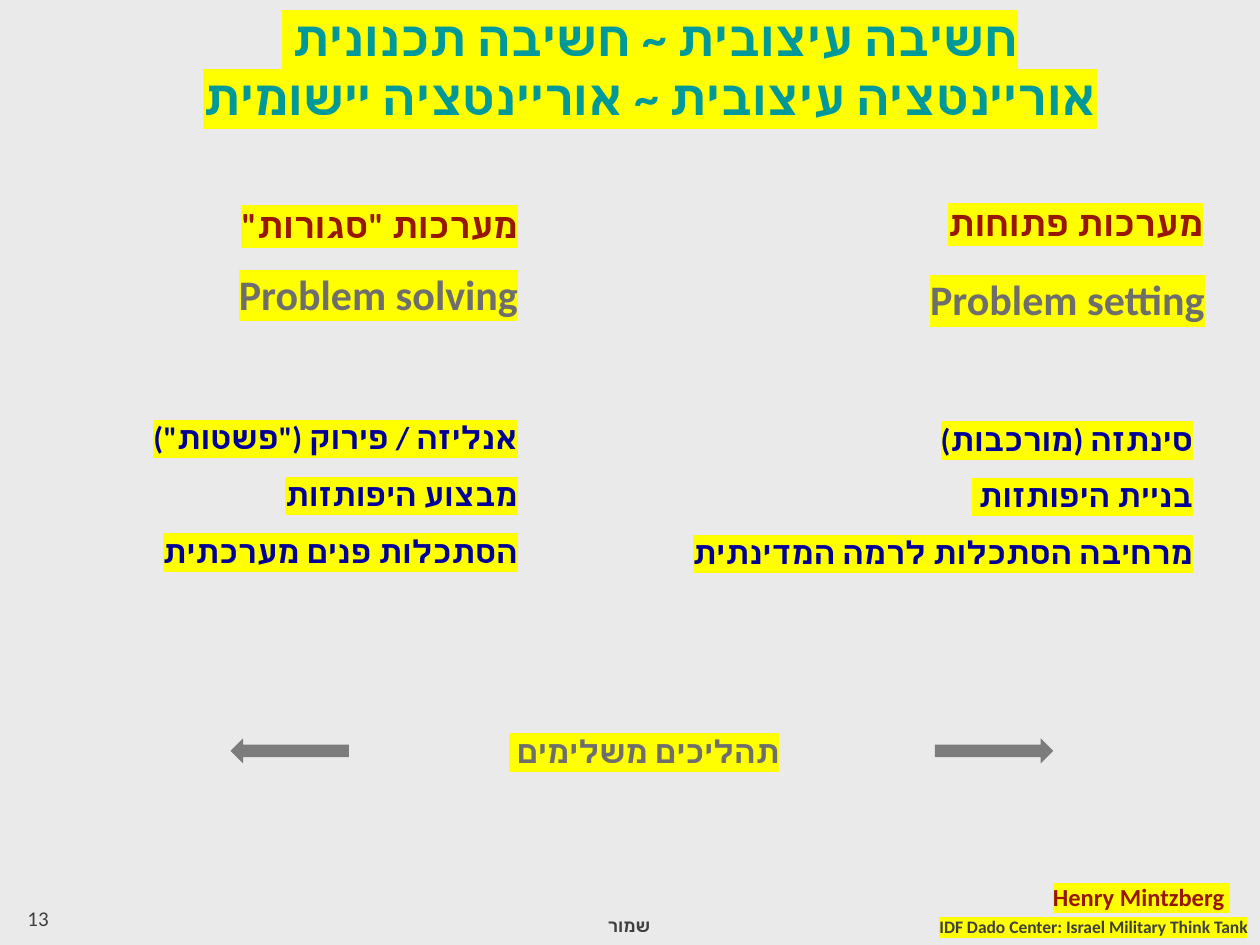
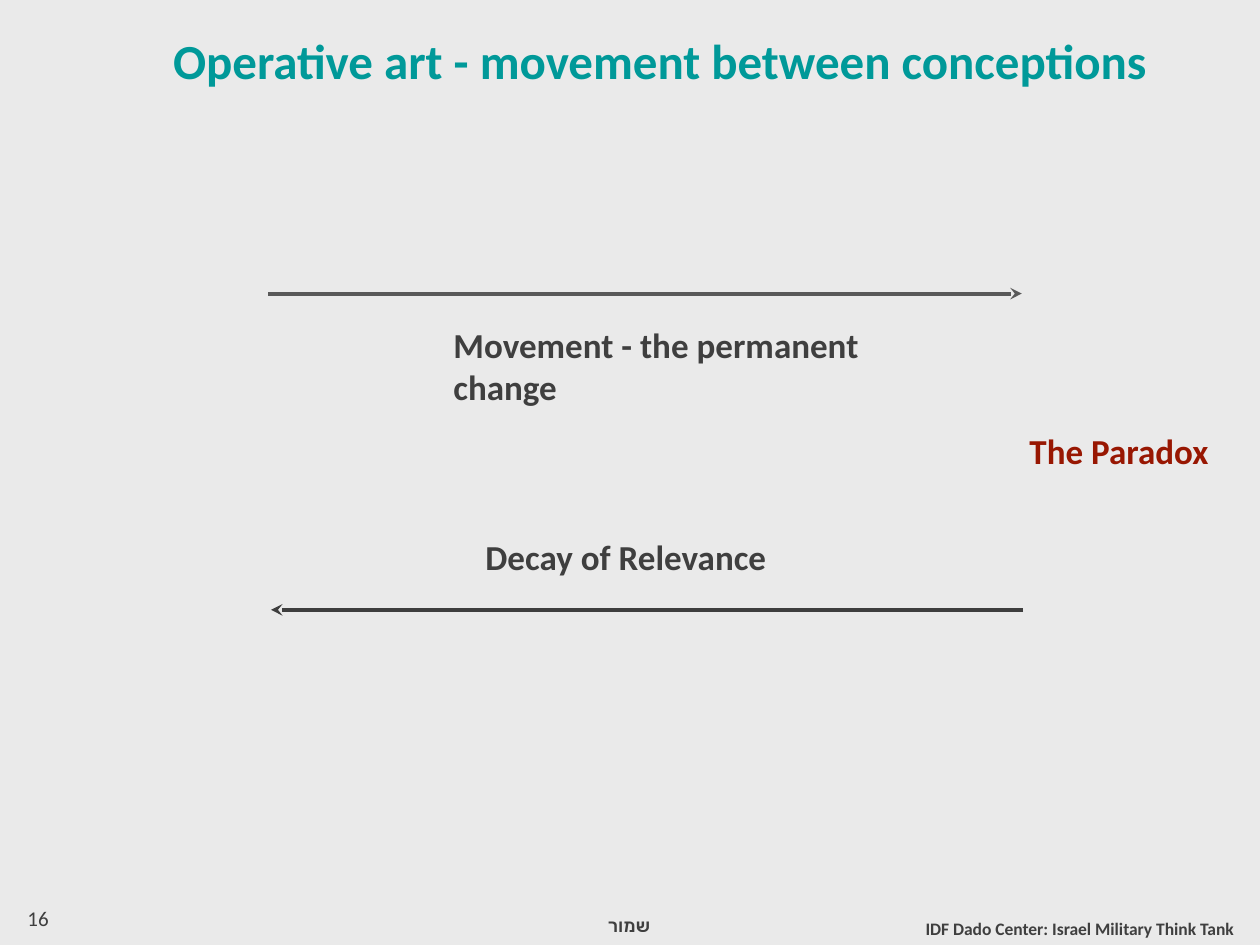
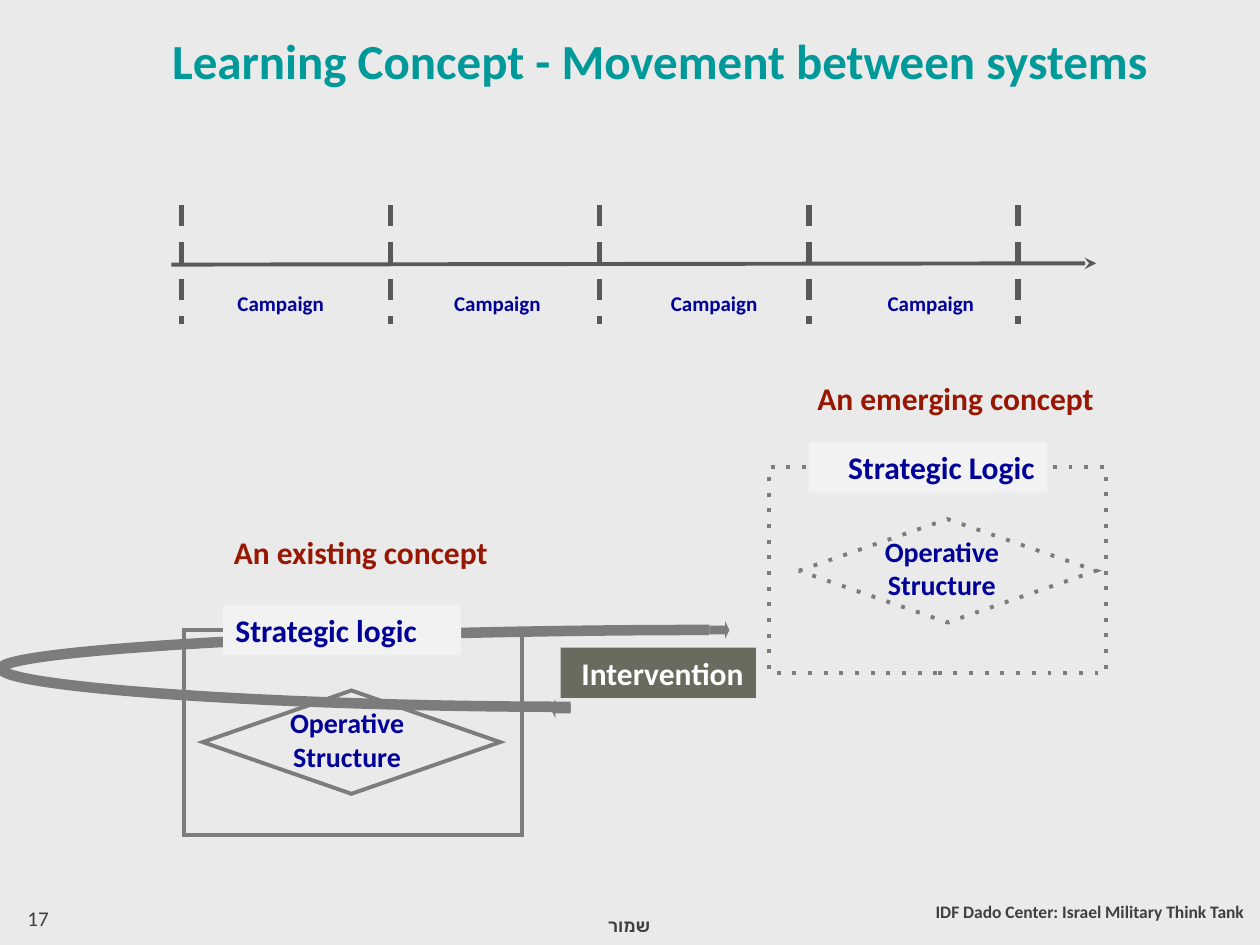
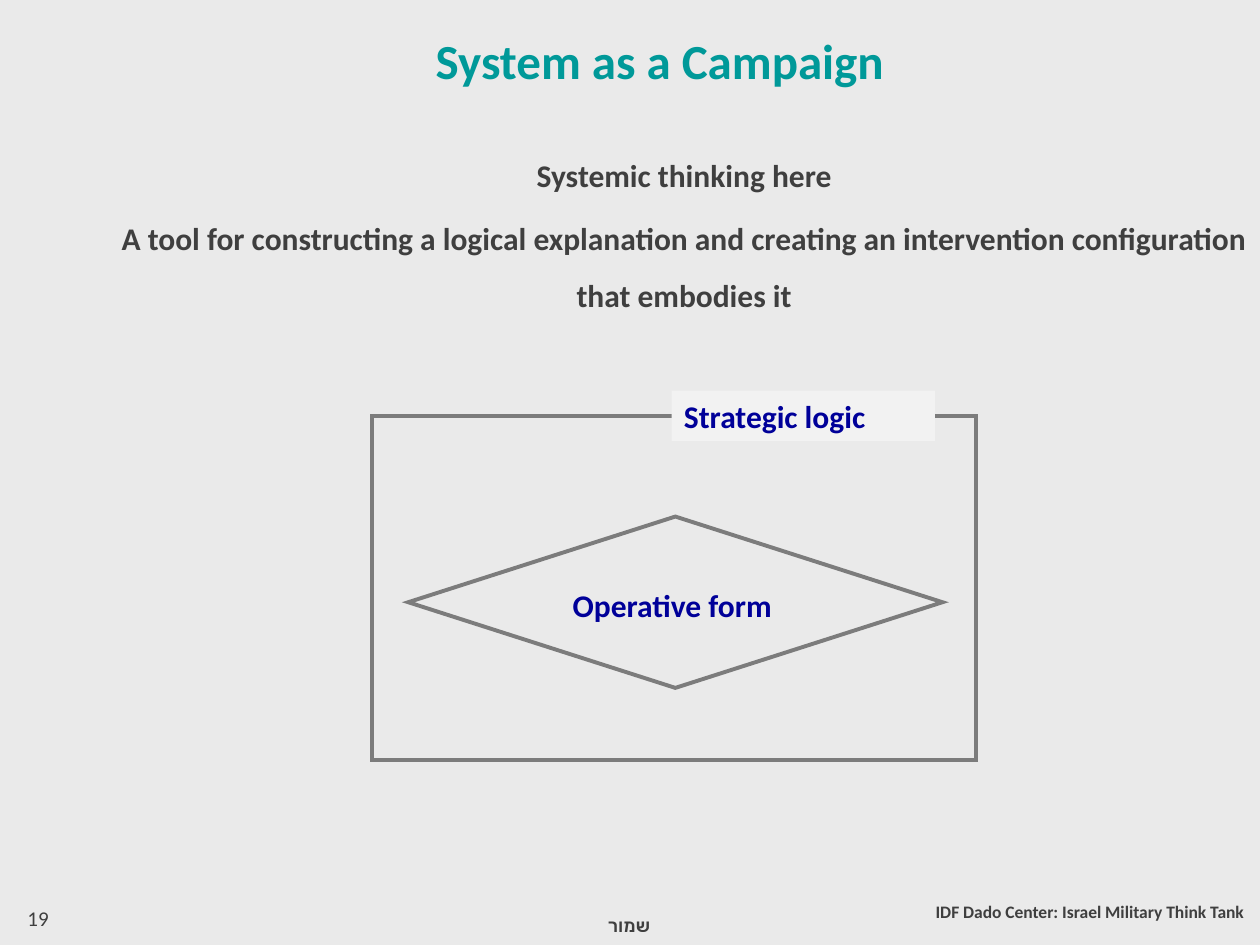
from dataclasses import dataclass

from lxml.etree import SubElement
from pptx import Presentation
from pptx.dml.color import RGBColor
from pptx.enum.shapes import MSO_CONNECTOR as Connector, MSO_SHAPE as Preset
from pptx.enum.text import MSO_ANCHOR as Anchor, MSO_AUTO_SIZE as AutoSize, PP_ALIGN as Align
from pptx.oxml.ns import qn
from pptx.util import Inches, Pt


@dataclass(frozen=True)
class Theme:
    font: str = "Calibri"
    background: str = "EAEAEA"
    title: str = "009999"
    body: str = "3F3F3F"
    accent: str = "981702"
    navy: str = "000099"
    muted: str = "6E6E6E"
    outline: str = "7C7C7C"
    axis: str = "595959"
    dark_axis: str = "3E3E3E"
    label: str = "F2F2F2"
    olive: str = "686B5D"
    white: str = "FFFFFF"
    highlight: str = "FFFF00"
    title_size: int = 28
    large_size: int = 24
    heading_size: int = 20
    text_size: int = 18
    inner_size: int = 16
    name_size: int = 14
    small_size: int = 12
    footer_size: int = 10


THEME = Theme()
TITLE_ONLY, ONE_LIST, TWO_LISTS = 5, 1, 3


def write_text(shape, text, size=THEME.text_size, color=THEME.body, bold=True, align=Align.RIGHT,
               rtl=True, highlight=False, spacing=None, gap=0):
    """Fill a shape with one paragraph per item of text, or a single one for a string."""
    frame = shape.text_frame
    frame.word_wrap = True
    frame.auto_size = AutoSize.NONE
    frame.vertical_anchor = Anchor.TOP
    for index, line in enumerate([text] if isinstance(text, str) else text):
        paragraph = frame.add_paragraph() if index else frame.paragraphs[0]
        paragraph.text = line
        properties = paragraph._p.get_or_add_pPr()
        properties.set("rtl", "1" if rtl else "0")
        if shape.is_placeholder:
            properties.set("marL", "0")
            properties.set("indent", "0")
            SubElement(properties, qn("a:buNone"))
        paragraph.alignment = align
        paragraph.space_before = Pt(gap if index else 0)
        if spacing:
            paragraph.line_spacing = spacing
        for run in paragraph.runs:
            font = run.font
            font.size, font.bold = Pt(size), bold
            font.color.rgb = RGBColor.from_string(color)
            run_properties = run._r.get_or_add_rPr()
            if highlight:
                mark = SubElement(run_properties, qn("a:highlight"))
                SubElement(mark, qn("a:srgbClr"), val=THEME.highlight)
            font.name = THEME.font
            SubElement(run_properties, qn("a:cs"), typeface=THEME.font)


def style_line(line, color, width, dash=None, arrow=None):
    line.color.rgb = RGBColor.from_string(color)
    line.width = Pt(width)
    element = line._get_or_add_ln()
    if dash:
        SubElement(element, qn("a:prstDash"), val=dash)
    SubElement(element, qn("a:miter"), lim="800000")
    if arrow:
        SubElement(element, qn("a:tailEnd"), type=arrow)


class Deck:
    """Holds the presentation, its shared style and the slide being built."""

    def __init__(self):
        self.presentation = Presentation()
        self.presentation.slide_width = Inches(10)
        self.presentation.slide_height = Inches(7.5)
        fill = self.presentation.slide_master.background.fill
        fill.solid()
        fill.fore_color.rgb = RGBColor.from_string(THEME.background)
        self.slide = None

    def new_slide(self, number, title, layout=TITLE_ONLY, title_box=(0.86, 0.19, 8.75, 1.72),
                  footer_box=(6.8, 7.1, 3.17, 0.4), highlight=False):
        self.slide = self.presentation.slides.add_slide(self.presentation.slide_layouts[layout])
        self.placeholder(0, title_box, title, size=THEME.title_size, color=THEME.title,
                         align=Align.CENTER, highlight=highlight)
        self.text((0.12, 7.14, 2.33, 0.4), str(number), size=THEME.small_size, bold=False,
                  align=Align.LEFT)
        self.text((3.89, 7.21, 1.37, 0.4), "שמור", size=THEME.footer_size)
        self.text(footer_box, "IDF Dado Center: Israel Military Think Tank",
                  size=THEME.footer_size, highlight=highlight)

    def placeholder(self, index, box, text, **style):
        shape = self.slide.placeholders[index]
        shape.left, shape.top, shape.width, shape.height = map(Inches, box)
        write_text(shape, text, **style)

    def text(self, box, text, **style):
        write_text(self.slide.shapes.add_textbox(*map(Inches, box)), text, **style)

    def shape(self, preset, box, fill=None, outline=None, dash=None, head=None):
        shape = self.slide.shapes.add_shape(preset, *map(Inches, box))
        shape.shadow.inherit = False
        if head:
            shape.adjustments[1] = head
        if fill:
            shape.fill.solid()
            shape.fill.fore_color.rgb = RGBColor.from_string(fill)
        else:
            shape.fill.background()
        if outline:
            style_line(shape.line, outline, 2.25, dash)
        else:
            shape.line.fill.background()
        return shape

    def label(self, box, text, fill=THEME.label, color=THEME.navy, **style):
        write_text(self.shape(Preset.RECTANGLE, box, fill), text, color=color, **style)

    def line(self, start, end, color=THEME.axis, width=2.25, dash=None, arrow=None,
             kind=Connector.STRAIGHT):
        connector = self.slide.shapes.add_connector(kind, *map(Inches, (*start, *end)))
        style_line(connector.line, color, width, dash, arrow)
        SubElement(connector._element.spPr, qn("a:effectLst"))
        return connector

    def framed_diamond(self, frame, diamond, dash=None):
        self.shape(Preset.RECTANGLE, frame, outline=THEME.outline, dash=dash)
        self.shape(Preset.DIAMOND, diamond, outline=THEME.outline, dash=dash)


def build_thinking(deck):
    deck.new_slide(13, "חשיבה עיצובית ~ חשיבה תכנונית \nאוריינטציה עיצובית ~ אוריינטציה יישומית",
                   TWO_LISTS, title_box=(0.66, 0.01, 9, 1.17),
                   footer_box=(6.72, 7.22, 3.28, 0.4), highlight=True)
    columns = (
        ((5.16, 1.38, 4.49, 0.61), "מערכות פתוחות",
         (6.51, 2.12, 3.15, 0.5), "Problem setting",
         (5.16, 3.13, 4.41, 1.62),
         ("סינתזה (מורכבות)", "בניית היפותזות ", "מרחיבה הסתכלות לרמה המדינתית")),
        ((0.74, 1.4, 3.47, 0.55), 'מערכות "סגורות"',
         (1.06, 2.08, 3.15, 0.5), "Problem solving",
         (0.19, 3.12, 4.02, 1.62),
         ('אנליזה / פירוק ("פשטות")', "מבצוע היפותזות", "הסתכלות פנים מערכתית")),
    )
    for index, (system_box, system, problem_box, problem, list_box, items) in enumerate(columns, 1):
        deck.text(system_box, system, size=THEME.heading_size, color=THEME.accent,
                  highlight=True, spacing=1.5)
        deck.text(problem_box, problem, size=THEME.large_size, color=THEME.muted, highlight=True)
        deck.placeholder(index, list_box, items, color=THEME.navy, highlight=True, spacing=1.5)
    deck.text((2.93, 5.76, 4.37, 0.4), "תהליכים משלימים ", color=THEME.muted,
              align=Align.CENTER, highlight=True)
    for preset, left in ((Preset.RIGHT_ARROW, 7.42), (Preset.LEFT_ARROW, 1.83)):
        deck.shape(preset, (left, 5.86, 0.94, 0.2), THEME.outline)
    deck.text((6.51, 6.95, 3.35, 0.34), " Henry Mintzberg", size=THEME.name_size,
              color=THEME.accent, highlight=True)


def build_paradox(deck):
    deck.new_slide(16, "Operative art - movement between conceptions",
                   footer_box=(6.72, 7.24, 3.17, 0.4))
    deck.line((2.13, 2.33), (8.11, 2.33), arrow="stealth")
    deck.text((3.5, 2.52, 3.59, 0.44), "Movement - the permanent change",
              size=THEME.heading_size, align=Align.LEFT, rtl=False)
    deck.line((8.12, 4.84), (2.15, 4.84), THEME.dark_axis, arrow="stealth")
    deck.text((3.5, 4.2, 2.68, 0.44), "Decay of Relevance", size=THEME.heading_size)
    deck.text((7.47, 3.36, 2.22, 0.44), "The Paradox", size=THEME.heading_size,
              color=THEME.accent)


def build_learning(deck):
    deck.new_slide(17, "Learning Concept - Movement between systems")
    deck.framed_diamond((1.46, 5, 2.68, 1.63), (1.61, 5.48, 2.36, 0.82))
    deck.framed_diamond((6.1, 3.71, 2.68, 1.63), (6.34, 4.12, 2.36, 0.82), dash="dot")

    deck.shape(Preset.RIGHT_ARROW, (5.63, 4.93, 0.16, 0.14), THEME.outline, head=0.25)
    deck.shape(Preset.LEFT_ARROW, (4.37, 5.55, 0.16, 0.15), THEME.outline, head=0.25)
    loop = deck.line((4.53, 5.61), (5.63, 5), THEME.outline, 6, kind=Connector.CURVE)
    guides = loop._element.spPr.find(qn("a:prstGeom")).get_or_add_avLst()
    SubElement(guides, qn("a:gd"), name="adj1", fmla="val -411100")

    deck.label((1.77, 4.8, 1.89, 0.4), "Strategic logic", align=Align.LEFT, rtl=False)
    deck.label((6.42, 3.51, 1.89, 0.4), "Strategic Logic")
    deck.label((4.45, 5.14, 1.55, 0.4), "Intervention", THEME.olive, THEME.white)
    for left, top in ((1.93, 5.55), (6.65, 4.19)):
        deck.text((left, top, 1.65, 0.64), "Operative Structure", size=THEME.inner_size,
                  color=THEME.navy, align=Align.CENTER)
    deck.text((1.61, 4.18, 2.36, 0.4), "An existing concept", color=THEME.accent)
    deck.text((6.1, 2.96, 2.68, 0.4), "An emerging concept", color=THEME.accent)

    deck.line((1.36, 2.1), (8.7, 2.09), arrow="stealth")
    for index in range(5):
        tick = 1.44 + 1.66 * index
        deck.line((tick, 1.63), (tick, 2.57), width=3, dash="dash")
    for index in range(4):
        deck.text((1.67 + 1.72 * index, 2.26, 1, 0.3), "Campaign", size=THEME.small_size,
                  color=THEME.navy)


def build_campaign(deck):
    deck.new_slide(19, "System as a Campaign", ONE_LIST)
    deck.framed_diamond((2.95, 3.3, 4.8, 2.73), (3.24, 4.1, 4.24, 1.36))
    deck.label((5.33, 3.1, 2.09, 0.4), "Strategic logic", align=Align.LEFT, rtl=False)
    deck.text((3.85, 4.6, 2.97, 0.4), "Operative form", color=THEME.navy, align=Align.CENTER)
    deck.placeholder(1, (0.67, 1.04, 9.52, 1.09),
                     ("Systemic thinking here",
                      "A tool for constructing a logical explanation and creating "
                      "an intervention configuration that embodies it"),
                     align=Align.CENTER, spacing=1.5, gap=3.6)


def main():
    deck = Deck()
    for build in (build_thinking, build_paradox, build_learning, build_campaign):
        build(deck)
    deck.presentation.save("out.pptx")


if __name__ == "__main__":
    main()
